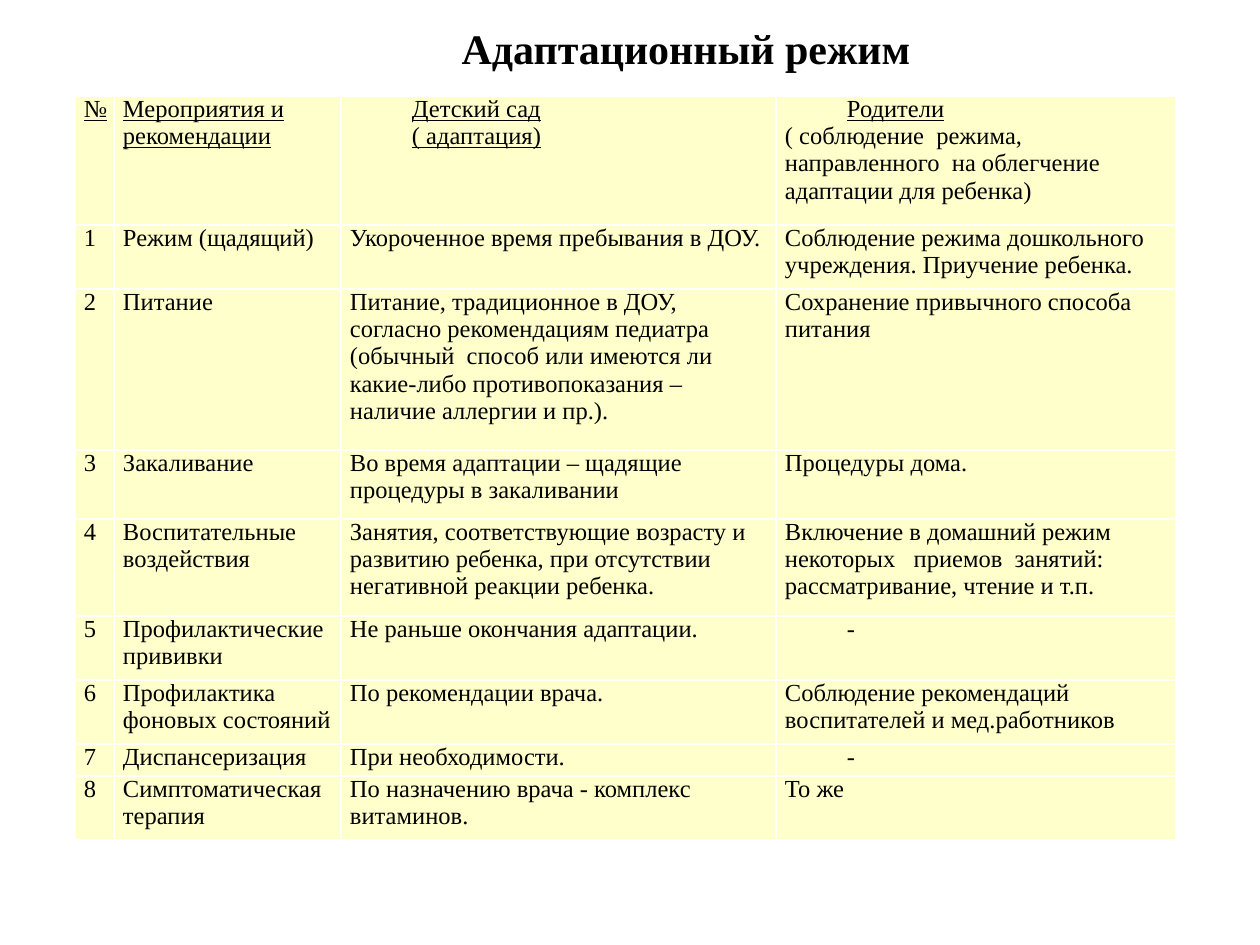
import pptx
import pptx.dml.color
import pptx.enum.text
import pptx.oxml
import pptx.oxml.ns
import pptx.util

PX = 914400 / 126
ALIGN = pptx.enum.text.PP_ALIGN
THEME = {
    "font": "Times New Roman",
    "text": "000000",
    "cell": "FFFFCC",
    "border": "FFFFFF",
    "title_size": 24,
    "body_size": 14,
    "border_width": 1,
}
INDENT = 62
CELL_MARGINS = {"margin_left": 9, "margin_right": 9, "margin_top": 0, "margin_bottom": 0}
TABLE_LEFT, TABLE_TOP = 75, 96
COLUMN_WIDTHS = [39, 227, 435, 400]
ROW_HEIGHTS = [129, 64, 161, 69, 97, 64, 64, 32, 64]

TITLE = "Адаптационный режим"
PLAIN = {}
INDENTED = {"indent": INDENT}
UNDERLINED = {"underline": True}
INDENTED_UNDERLINED = INDENTED | UNDERLINED
DASH = [("-", INDENTED)]
HEADER = [
    [("№", UNDERLINED)],
    [("Мероприятия и рекомендации", UNDERLINED)],
    [("Детский сад", INDENTED_UNDERLINED), ("( адаптация)", INDENTED_UNDERLINED)],
    [
        ("Родители", INDENTED_UNDERLINED),
        ("( соблюдение  режима, направленного  на облегчение адаптации для ребенка)", PLAIN),
    ],
]
MEASURES = [
    ("Режим (щадящий)", "Укороченное время пребывания в ДОУ.",
     "Соблюдение режима дошкольного учреждения. Приучение ребенка."),
    ("Питание",
     "Питание, традиционное в ДОУ, согласно рекомендациям педиатра (обычный  способ "
     "или имеются ли какие-либо противопоказания – наличие аллергии и пр.).",
     "Сохранение привычного способа питания"),
    ("Закаливание", "Во время адаптации – щадящие процедуры в закаливании", "Процедуры дома."),
    ("Воспитательные воздействия",
     "Занятия, соответствующие возрасту и развитию ребенка, при отсутствии негативной реакции ребенка.",
     "Включение в домашний режим некоторых   приемов  занятий: рассматривание, чтение и т.п."),
    ("Профилактические прививки", "Не раньше окончания адаптации.", DASH),
    ("Профилактика фоновых состояний", "По рекомендации врача.",
     "Соблюдение рекомендаций воспитателей и мед.работников"),
    ("Диспансеризация", "При необходимости.", DASH),
    ("Симптоматическая терапия", "По назначению врача - комплекс витаминов.", "То же"),
]


def px(n):
    return pptx.util.Emu(round(n * PX))


def set_all(obj, values):
    for name, value in values.items():
        setattr(obj, name, value)


def write_paragraph(p, text, size, align, indent=0, **font):
    p.alignment = align
    pPr = p._p.get_or_add_pPr()
    pPr.set("marL", "0")
    pPr.set("indent", str(px(indent)))
    r = p.add_run()
    r.text = text
    set_all(r.font, {"name": THEME["font"], "size": pptx.util.Pt(size)} | font)
    r.font.color.rgb = pptx.dml.color.RGBColor.from_string(THEME["text"])


def add_title(slide):
    sp = slide.shapes.title
    set_all(sp, {"left": px(384), "top": px(16), "width": px(542), "height": px(63)})
    tf = sp.text_frame
    set_all(tf, {
        "word_wrap": False,
        "auto_size": pptx.enum.text.MSO_AUTO_SIZE.SHAPE_TO_FIT_TEXT,
        "vertical_anchor": pptx.enum.text.MSO_ANCHOR.MIDDLE,
    })
    write_paragraph(tf.paragraphs[0], TITLE, THEME["title_size"], ALIGN.CENTER, INDENT, bold=True)


def set_borders(cell):
    tcPr = cell._tc.get_or_add_tcPr()
    width = pptx.util.Pt(THEME["border_width"])
    for i, side in enumerate(("lnL", "lnR", "lnT", "lnB")):
        tcPr.insert(i, pptx.oxml.parse_xml(
            f'<a:{side} {pptx.oxml.ns.nsdecls("a")} w="{width}"><a:solidFill>'
            f'<a:srgbClr val="{THEME["border"]}"/></a:solidFill></a:{side}>'))


def fill_cell(cell, content, align):
    set_all(cell, {name: px(n) for name, n in CELL_MARGINS.items()})
    cell.fill.solid()
    cell.fill.fore_color.rgb = pptx.dml.color.RGBColor.from_string(THEME["cell"])
    set_borders(cell)
    paragraphs = [(content, PLAIN)] if isinstance(content, str) else content
    tf = cell.text_frame
    for i, (text, style) in enumerate(paragraphs):
        p = tf.paragraphs[0] if i == 0 else tf.add_paragraph()
        write_paragraph(p, text, THEME["body_size"], align, **style)


def add_measures_table(slide):
    rows = [HEADER] + [(str(n), *row) for n, row in enumerate(MEASURES, 1)]
    table = slide.shapes.add_table(
        len(rows), len(COLUMN_WIDTHS), px(TABLE_LEFT), px(TABLE_TOP),
        px(sum(COLUMN_WIDTHS)), px(sum(ROW_HEIGHTS))).table
    set_all(table, {"first_row": False, "horz_banding": False})
    for column, width in zip(table.columns, COLUMN_WIDTHS):
        column.width = px(width)
    for i, (row, height) in enumerate(zip(rows, ROW_HEIGHTS)):
        table.rows[i].height = px(height)
        for j, content in enumerate(row):
            align = ALIGN.JUSTIFY if i > 0 and j < 2 else ALIGN.LEFT
            fill_cell(table.cell(i, j), content, align)


def main():
    prs = pptx.Presentation()
    set_all(prs, {"slide_width": px(1260), "slide_height": px(945)})
    slide = prs.slides.add_slide(prs.slide_layouts[5])
    add_title(slide)
    add_measures_table(slide)
    prs.save("out.pptx")


if __name__ == "__main__":
    main()
